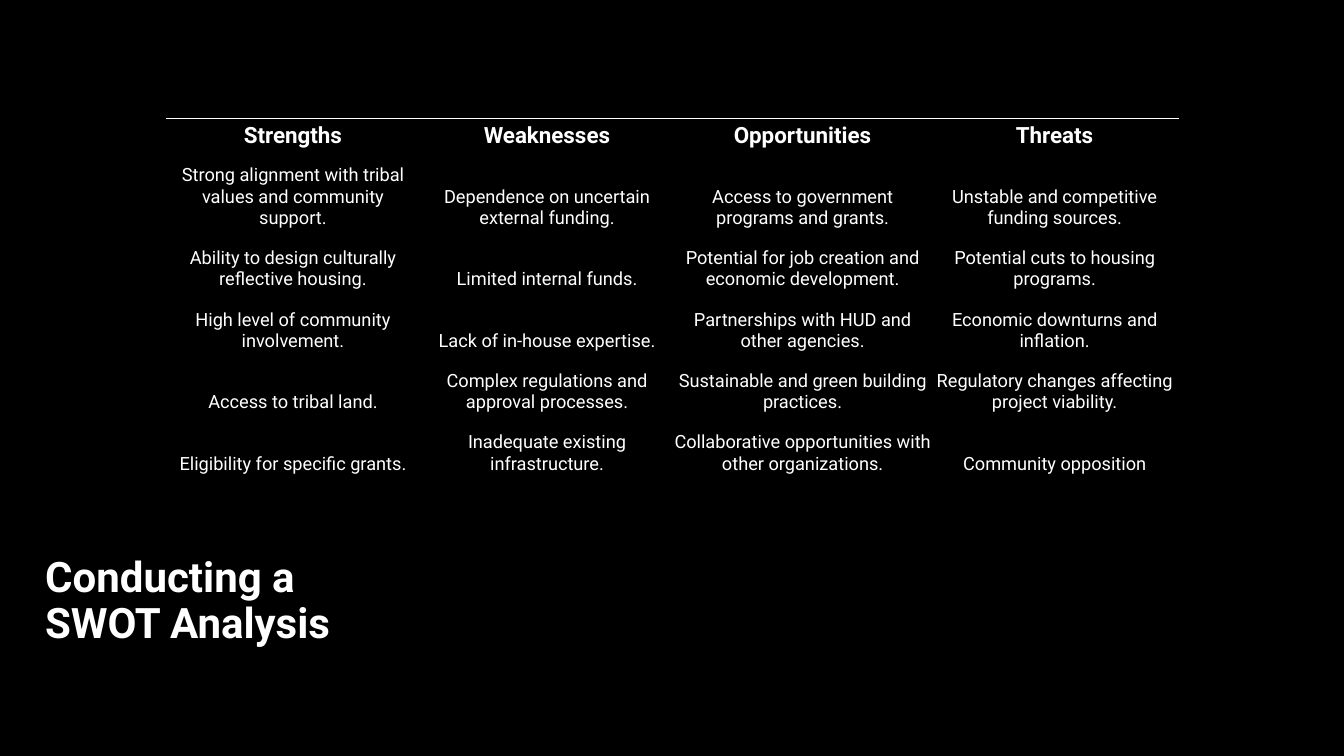
from lxml.etree import SubElement
from pptx import Presentation
from pptx.dml.color import RGBColor
from pptx.enum.text import MSO_ANCHOR, PP_ALIGN
from pptx.oxml.ns import qn
from pptx.util import Inches, Pt

BLACK = RGBColor(0x00, 0x00, 0x00)
WHITE = RGBColor(0xFF, 0xFF, 0xFF)

WIDTHS = [2.52, 2.52, 2.55, 2.45]
HEAD_H, ROW_H = 0.4, 0.61
SWOT = {
    "Strengths": [
        "Strong alignment with tribal values and community support.",
        "Ability to design culturally reflective housing.",
        "High level of community involvement.",
        "Access to tribal land.",
        "Eligibility for specific grants.",
    ],
    "Weaknesses": [
        "Dependence on uncertain external funding.",
        "Limited internal funds.",
        "Lack of in-house expertise.",
        "Complex regulations and approval processes.",
        "Inadequate existing infrastructure.",
    ],
    "Opportunities": [
        "Access to government programs and grants.",
        "Potential for job creation and economic development.",
        "Partnerships with HUD and other agencies.",
        "Sustainable and green building practices.",
        "Collaborative opportunities with other organizations.",
    ],
    "Threats": [
        "Unstable and competitive funding sources.",
        "Potential cuts to housing programs.",
        "Economic downturns and inflation.",
        "Regulatory changes affecting project viability.",
        "Community opposition",
    ],
}


def write(frame, text, size=13, bold=False, align=PP_ALIGN.LEFT, space=1.0):
    para = frame.paragraphs[0]
    para.text = text
    para.alignment = align
    para.line_spacing = space
    for run in para.runs:
        font = run.font
        font.name = "Roboto"
        font.size = Pt(size)
        font.bold = bold
        font.color.rgb = WHITE


def rule(cell, top):
    """Clear the cell's borders, leaving a thin white top edge if asked."""
    props = cell._tc.get_or_add_tcPr()
    for side in "LRTB":
        line = SubElement(props, qn(f"a:ln{side}"), w=str(Pt(0.75)))
        if top and side == "T":
            fill = SubElement(line, qn("a:solidFill"))
            SubElement(fill, qn("a:srgbClr"), val=str(WHITE))
        else:
            SubElement(line, qn("a:noFill"))


class Deck:
    def __init__(self):
        self.show = Presentation()
        self.show.slide_width = Inches(13.33)
        self.show.slide_height = Inches(7.5)
        self.slide = self.show.slides.add_slide(self.show.slide_layouts[6])
        back = self.slide.background.fill
        back.solid()
        back.fore_color.rgb = BLACK

    def title(self, text, left, top, width, height):
        box = self.slide.shapes.add_textbox(
            Inches(left), Inches(top), Inches(width), Inches(height))
        frame = box.text_frame
        frame.word_wrap = True
        frame.vertical_anchor = MSO_ANCHOR.BOTTOM
        write(frame, text, size=30, bold=True, space=0.9)

    def table(self, data, left, top):
        rows = [list(data), *zip(*data.values())]
        heights = [HEAD_H] + [ROW_H] * (len(rows) - 1)
        grid = self.slide.shapes.add_table(
            len(rows), len(data), Inches(left), Inches(top),
            Inches(sum(WIDTHS)), Inches(sum(heights))).table
        grid.first_row = grid.horz_banding = False
        for col, width in zip(grid.columns, WIDTHS):
            col.width = Inches(width)
        for row, height in zip(grid.rows, heights):
            row.height = Inches(height)
        for r, texts in enumerate(rows):
            for c, text in enumerate(texts):
                self.cell(grid.cell(r, c), text, head=r == 0)

    def cell(self, cell, text, head):
        cell.margin_left, cell.margin_top = Inches(0), Inches(0.03)
        cell.margin_right, cell.margin_bottom = Inches(0.01), Inches(0.11)
        cell.vertical_anchor = MSO_ANCHOR.BOTTOM
        rule(cell, top=head)
        cell.fill.background()
        write(cell.text_frame, text, size=16 if head else 13, bold=head,
              align=PP_ALIGN.CENTER)


def main():
    deck = Deck()
    deck.title("Conducting a \vSWOT Analysis", 0.35, 5.43, 12.26, 1.04)
    deck.table(SWOT, 1.65, 1.18)
    deck.show.save("out.pptx")


if __name__ == "__main__":
    main()
